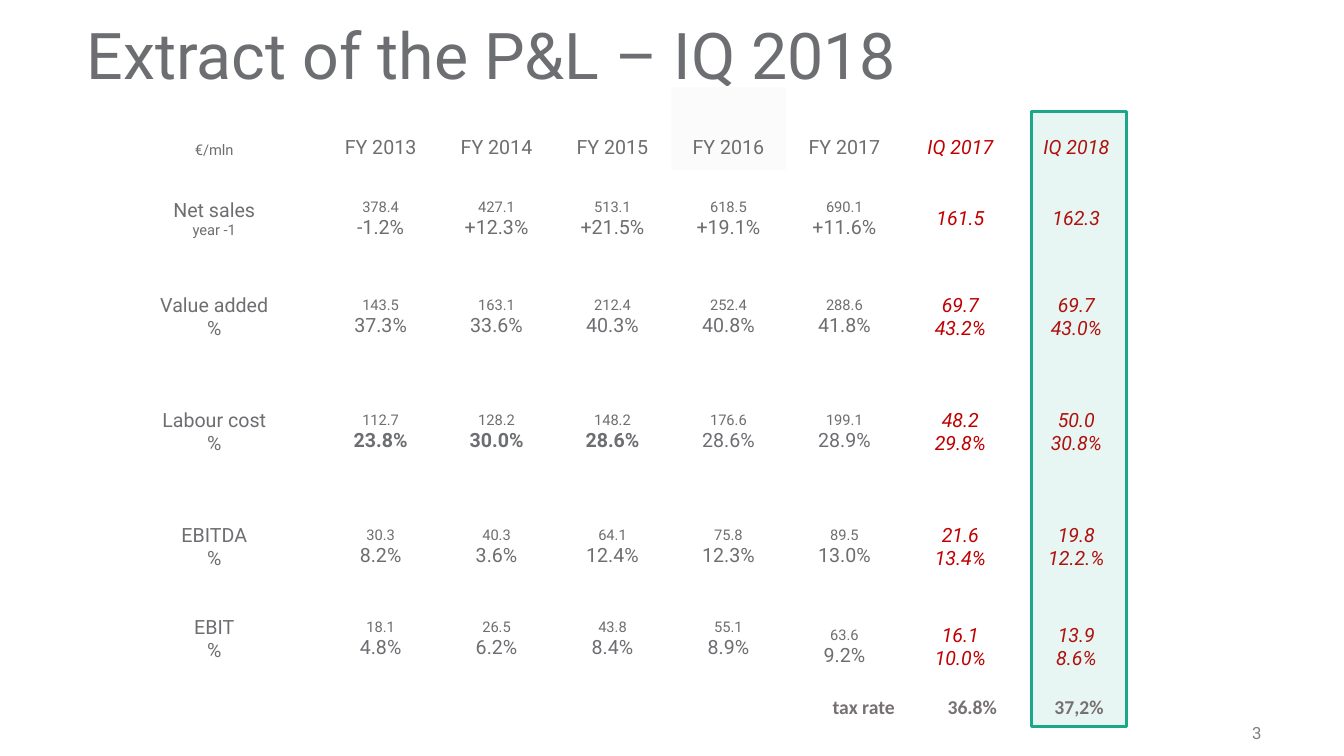
from lxml.etree import SubElement
from pptx import Presentation
from pptx.dml.color import RGBColor
from pptx.enum.shapes import MSO_SHAPE
from pptx.enum.text import MSO_ANCHOR, MSO_AUTO_SIZE, PP_ALIGN
from pptx.oxml.ns import qn
from pptx.util import Inches, Pt

GREY, RED, GREEN = "6D6E71", "C00000", "1DA789"
LARGE, SMALL = 14, 10.5

COLUMN_WIDTHS = [2.15] + [1.15] * 7
ROW_HEIGHTS = [0.83, 0.97, 0.98, 1.3, 0.98, 0.84]
FIRST_QUARTER = 6  # first of the two quarterly columns
LABOUR, EBIT = 3, 5
SHADED_YEAR = 4

RESULTS = [
    ["€/mln", "FY 2013", "FY 2014", "FY 2015", "FY 2016", "FY 2017", "IQ 2017", "IQ 2018"],
    ["Net sales\nyear -1", "378.4\n-1.2%", "427.1\n+12.3%", "513.1\n+21.5%",
     "618.5\n+19.1%", "690.1\n+11.6%", "161.5", "162.3"],
    ["Value added\n%", "143.5\n37.3%", "163.1\n33.6%", "212.4\n40.3%",
     "252.4\n40.8%", "288.6\n41.8%", "69.7\n43.2%", "69.7\n43.0%"],
    ["Labour cost\n%", "112.7\n23.8%", "128.2\n30.0%", "148.2\n28.6%",
     "176.6\n28.6%", "199.1\n28.9%", "48.2\n29.8%", "50.0\n30.8%"],
    ["EBITDA\n%", "30.3\n8.2%", "40.3\n3.6%", "64.1\n12.4%",
     "75.8\n12.3%", "89.5\n13.0%", "21.6\n13.4%", "19.8\n12.2.%"],
    ["EBIT\n%", "18.1\n4.8%", "26.5\n6.2%", "43.8\n8.4%",
     "55.1\n8.9%", "63.6\n9.2%", "16.1\n10.0%", "13.9\n8.6%"],
]


def color(value):
    return RGBColor.from_string(value)


def line_size(row, col, line):
    """Yearly amounts and the small captions are set smaller than the rest."""
    yearly_amount = row > 0 and 0 < col < FIRST_QUARTER and line == 0
    caption = col == 0 and (row, line) in ((0, 0), (1, 1))
    return SMALL if yearly_amount or caption else LARGE


class ResultsSlide:
    font = "Roboto"

    def __init__(self, deck):
        self.slide = deck.slides.add_slide(deck.slide_layouts[5])

    def style(self, paragraph, size, ink=GREY, bold=False, italic=False,
              font=None, align=PP_ALIGN.LEFT):
        paragraph.alignment = align
        for run in paragraph.runs:
            run.font.name = font or self.font
            run.font.size = Pt(size)
            run.font.bold = bold
            run.font.italic = italic
            run.font.color.rgb = color(ink)

    def fill(self, part, ink, opacity):
        part.fill.solid()
        part.fill.fore_color.rgb = color(ink)
        properties = part._tc.tcPr if hasattr(part, "_tc") else part._element.spPr
        srgb = properties.find(qn("a:solidFill")).find(qn("a:srgbClr"))
        SubElement(srgb, qn("a:alpha")).set("val", str(opacity * 1000))

    def title(self, text, left, top, width, height):
        heading = self.slide.shapes.title
        heading.left, heading.top = Inches(left), Inches(top)
        heading.width, heading.height = Inches(width), Inches(height)
        frame = heading.text_frame
        frame.text = text
        frame.auto_size = MSO_AUTO_SIZE.NONE
        frame.vertical_anchor = MSO_ANCHOR.TOP
        frame.margin_left = frame.margin_right = 0
        frame.margin_top = frame.margin_bottom = 0
        frame.paragraphs[0].line_spacing = 0.9
        self.style(frame.paragraphs[0], 46)

    def cell(self, cell, text, row, col):
        quarterly = col >= FIRST_QUARTER
        cell.fill.background()
        cell.vertical_anchor = MSO_ANCHOR.MIDDLE if row else MSO_ANCHOR.BOTTOM
        padding = 0 if row in (LABOUR, EBIT) else 0.11
        cell.margin_left = cell.margin_right = Inches(0.11)
        cell.margin_top = cell.margin_bottom = Inches(padding)
        if row == EBIT and col >= FIRST_QUARTER - 1:
            cell.margin_top = Inches(0.16)
        cell.text_frame.text = text
        for line, paragraph in enumerate(cell.text_frame.paragraphs):
            self.style(paragraph, line_size(row, col, line),
                       RED if quarterly else GREY, italic=quarterly,
                       bold=row == LABOUR and 1 <= col <= 3 and line == 1,
                       align=PP_ALIGN.CENTER)

    def table(self, rows, left, top):
        frame = self.slide.shapes.add_table(
            len(rows), len(rows[0]), Inches(left), Inches(top),
            Inches(sum(COLUMN_WIDTHS)), Inches(sum(ROW_HEIGHTS)))
        grid = frame.table
        grid.first_row = grid.horz_banding = False
        for column, width in zip(grid.columns, COLUMN_WIDTHS):
            column.width = Inches(width)
        for band, height in zip(grid.rows, ROW_HEIGHTS):
            band.height = Inches(height)
        for row, texts in enumerate(rows):
            for col, text in enumerate(texts):
                self.cell(grid.cell(row, col), text, row, col)
        self.fill(grid.cell(0, SHADED_YEAR), "F2F2F2", 25)

    def highlight(self, left, top, width, height):
        frame = self.slide.shapes.add_shape(
            MSO_SHAPE.RECTANGLE, Inches(left), Inches(top), Inches(width), Inches(height))
        frame.shadow.inherit = False
        self.fill(frame, GREEN, 10)
        frame.line.color.rgb = color(GREEN)
        frame.line.width = Pt(2.25)

    def text(self, text, left, top, width, height, size, ink, tabs=(),
             anchor=MSO_ANCHOR.TOP, **style):
        box = self.slide.shapes.add_textbox(
            Inches(left), Inches(top), Inches(width), Inches(height))
        frame = box.text_frame
        frame.word_wrap = True
        frame.vertical_anchor = anchor
        frame.text = text
        paragraph = frame.paragraphs[0]
        if tabs:
            stops = SubElement(paragraph._p.get_or_add_pPr(), qn("a:tabLst"))
            for position in tabs:
                SubElement(stops, qn("a:tab"), pos=str(Inches(position)), algn="l")
        self.style(paragraph, size, ink, **style)


def main():
    deck = Presentation()
    deck.slide_width, deck.slide_height = Inches(13.33), Inches(7.5)
    results = ResultsSlide(deck)

    # Title
    results.title("Extract of the P&L – IQ 2018", 0.86, 0.24, 9.34, 0.81)

    # Results by period, with the latest quarter framed
    results.table(RESULTS, 1.05, 0.86)
    results.highlight(10.23, 1.11, 0.94, 6.1)

    # Tax rate and page number
    results.text("tax rate\t36.8%\t37,2%", 8.16, 6.84, 3.58, 0.34, 14, "767171",
                 tabs=(1.14, 2.2), bold=True, font="Calibri")
    results.text("3", 9.61, 7.07, 3, 0.4, 12, "808080",
                 anchor=MSO_ANCHOR.MIDDLE, align=PP_ALIGN.RIGHT)

    deck.save("out.pptx")


if __name__ == "__main__":
    main()
